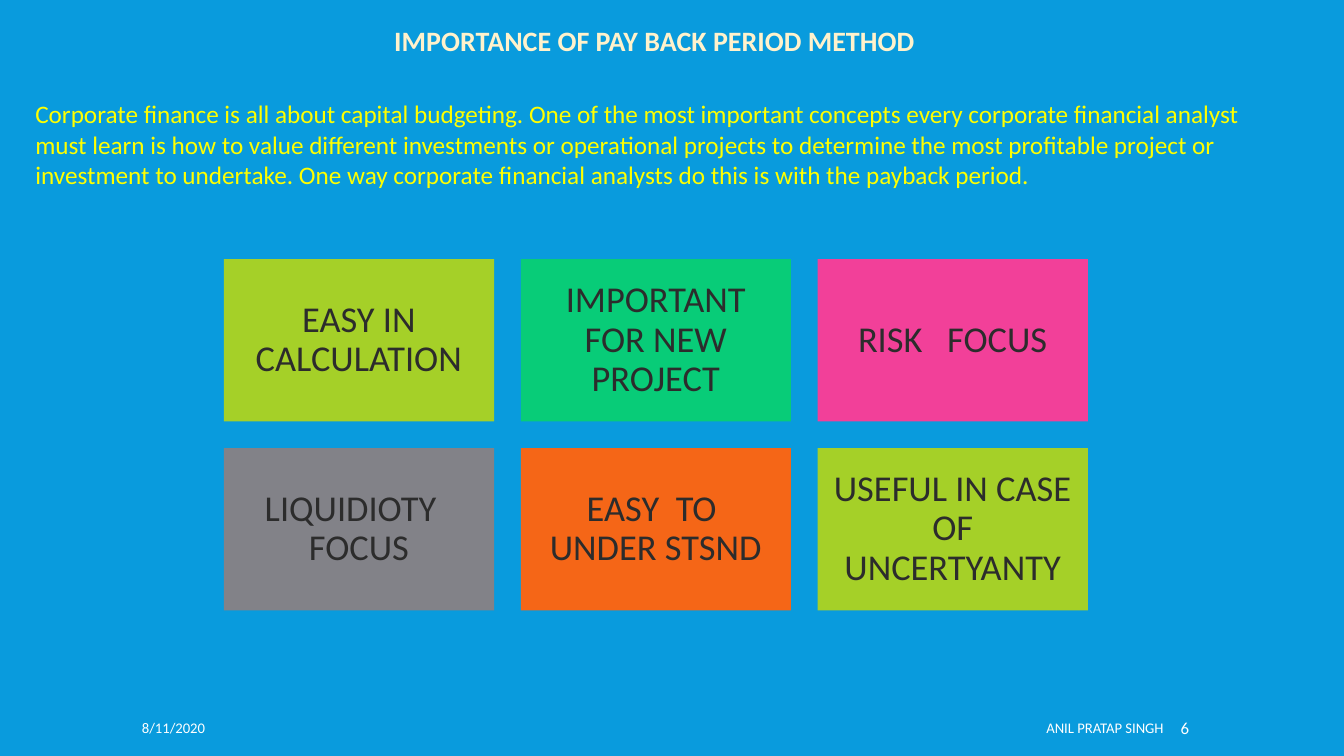
from lxml import etree
from pptx import Presentation
from pptx.dml.color import RGBColor
from pptx.enum import shapes, text
from pptx.oxml import ns
from pptx.util import Inches, Pt

COLORS = {
    "background": "099BDD", "title": "FFF2CC", "intro": "FFFF00",
    "footer": "FFFFFF", "tile text": "2C2C2C", "lime": "A5D028",
    "green": "08CC78", "pink": "F24099", "grey": "828288", "orange": "F56617",
}
TILES = [
    ("EASY IN CALCULATION", "lime"),
    ("IMPORTANT FOR NEW PROJECT", "green"),
    ("RISK   FOCUS", "pink"),
    ("LIQUIDIOTY   FOCUS", "grey"),
    ("EASY  TO  UNDER STSND", "orange"),
    ("USEFUL IN CASE OF UNCERTYANTY", "lime"),
]
FOOTERS = [
    ("8/11/2020", 1.31, 3.28, 10.5, text.PP_ALIGN.LEFT, (0.1, 0.05)),
    ("ANIL PRATAP SINGH", 6.12, 5.52, 10.5, text.PP_ALIGN.RIGHT, (0.1, 0.1)),
    ("6", 11.66, 1.03, 12, text.PP_ALIGN.LEFT, (0.05, 0.1)),
]
INTRO = (
    "Corporate finance is all about capital budgeting. One of the most "
    "important concepts every corporate financial analyst must learn is how "
    "to value different investments or operational projects to determine the "
    "most profitable project or investment to undertake. One way corporate "
    "financial analysts do this is with the payback period."
)


def color(name):
    return RGBColor.from_string(COLORS[name])


def place(shape, left, top, width, height):
    shape.left, shape.top = Inches(left), Inches(top)
    shape.width, shape.height = Inches(width), Inches(height)


def write(shape, words, size, color_name, align=text.PP_ALIGN.LEFT,
          anchor=text.MSO_ANCHOR.TOP, sides=(0.1, 0.1), ends=0.05, wrap=True):
    """Fill a shape with one formatted paragraph and return it."""
    frame = shape.text_frame
    frame.auto_size = text.MSO_AUTO_SIZE.NONE
    frame.word_wrap = wrap
    frame.vertical_anchor = anchor
    frame.margin_left, frame.margin_right = map(Inches, sides)
    frame.margin_top = frame.margin_bottom = Inches(ends)
    para = frame.paragraphs[0]
    para.text = words
    para.alignment = align
    para.space_before = Pt(0)
    para.font.name = "Calibri"
    para.font.size = Pt(size)
    para.font.color.rgb = color(color_name)
    return para


def remove_bullet(para):
    properties = para._p.get_or_add_pPr()
    properties.set("marL", "0")
    properties.set("indent", "0")
    bullet = etree.Element(ns.qn("a:buNone"))
    properties.find(ns.qn("a:defRPr")).addprevious(bullet)


def add_tile(page, words, fill, left, top, width, height):
    tile = page.shapes.add_shape(
        shapes.MSO_SHAPE.RECTANGLE,
        Inches(left), Inches(top), Inches(width), Inches(height))
    tile.shadow.inherit = False
    tile.fill.solid()
    tile.fill.fore_color.rgb = color(fill)
    tile.line.fill.background()
    para = write(tile, words, 26, "tile text", text.PP_ALIGN.CENTER,
                 text.MSO_ANCHOR.MIDDLE, sides=(0.11, 0.11), ends=0.11)
    para.line_spacing = 0.9


def add_footer(page, words, left, width, size, align, sides):
    box = page.shapes.add_textbox(
        Inches(left), Inches(7.02), Inches(width), Inches(0.4))
    write(box, words, size, "footer", align, text.MSO_ANCHOR.MIDDLE, sides)


def main():
    deck = Presentation()
    deck.slide_width, deck.slide_height = Inches(13.33), Inches(7.5)
    page = deck.slides.add_slide(deck.slide_layouts[1])
    page.background.fill.solid()
    page.background.fill.fore_color.rgb = color("background")

    # Title and introduction
    title, intro = page.placeholders
    place(title, 3.81, 0.18, 5.86, 0.44)
    write(title, "IMPORTANCE OF PAY BACK PERIOD METHOD", 20, "title",
          wrap=False).font.bold = True
    place(intro, 0.25, 0.93, 12.68, 1.31)
    remove_bullet(write(intro, INTRO, 18, "intro"))

    # Grid of reasons, three to a row
    width, height, gap = 2.68, 1.61, 0.265
    for index, (words, fill) in enumerate(TILES):
        row, column = divmod(index, 3)
        add_tile(page, words, fill, 2.22 + column * (width + gap),
                 2.57 + row * (height + gap), width, height)

    # Date, author and page number
    for footer in FOOTERS:
        add_footer(page, *footer)

    deck.save("out.pptx")


if __name__ == "__main__":
    main()
